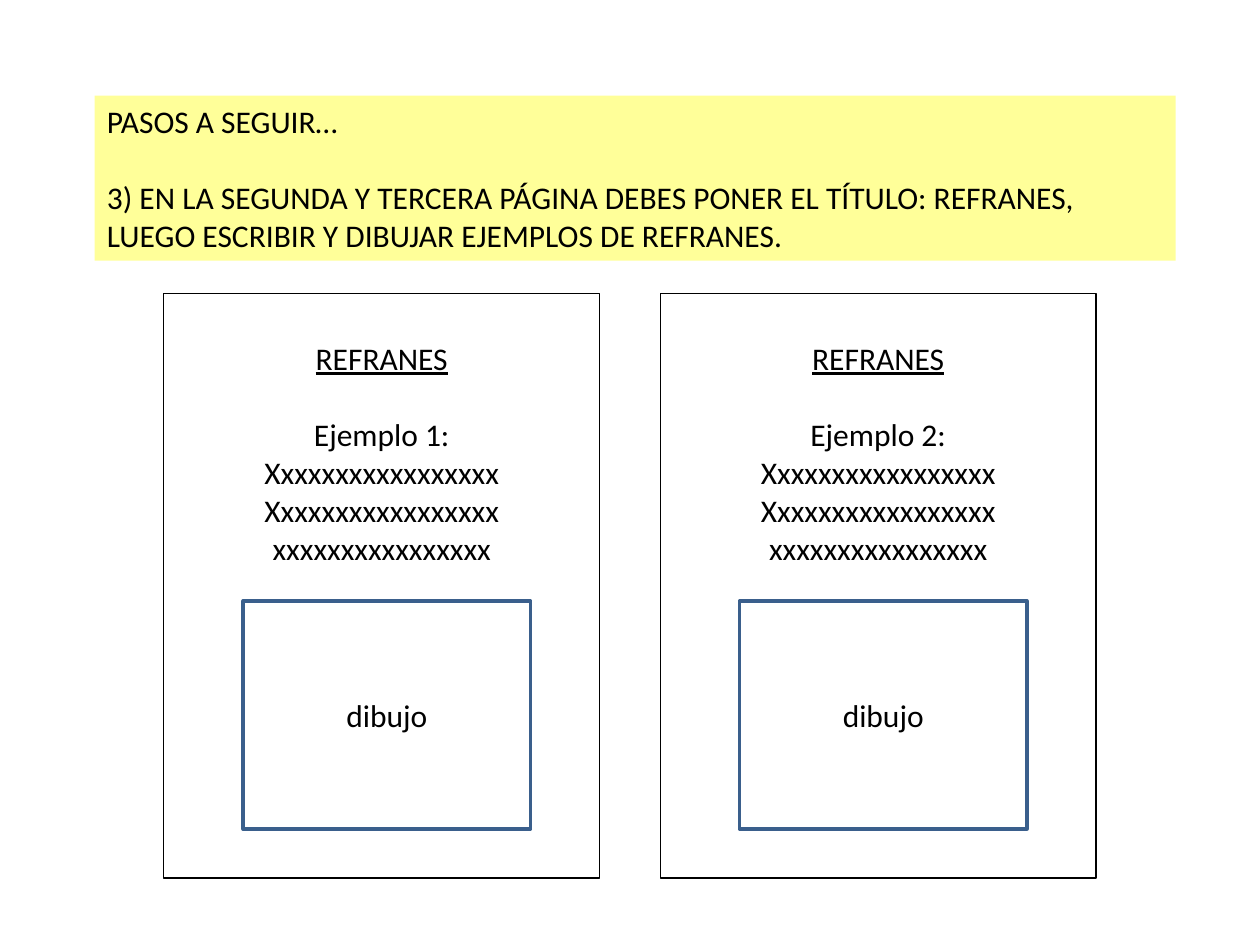
from pptx import Presentation
from pptx.dml.color import RGBColor
from pptx.enum.shapes import MSO_SHAPE
from pptx.enum.text import MSO_ANCHOR, PP_ALIGN
from pptx.util import Inches, Pt

RECTANGLE = MSO_SHAPE.RECTANGLE
TOP, MIDDLE = MSO_ANCHOR.TOP, MSO_ANCHOR.MIDDLE
LEFT, CENTER = PP_ALIGN.LEFT, PP_ALIGN.CENTER
BLANK_LAYOUT = 6
LINE_GAP = Pt(22)


def color(value):
    return RGBColor.from_string(value)


class SlideBuilder:
    font = "Calibri"
    size = Pt(18)
    ink = "000000"
    paper = "FFFFFF"
    highlight = "FFFF99"
    frame = "3A5F8C"

    def __init__(self, slide):
        self.slide = slide

    def box(self, left, top, width, height, lines, fill, line=None,
            weight=0.75, align=CENTER, anchor=TOP):
        box = self.slide.shapes.add_shape(
            RECTANGLE, Inches(left), Inches(top), Inches(width), Inches(height))
        box.shadow.inherit = False
        box.fill.solid()
        box.fill.fore_color.rgb = color(fill)
        if line:
            box.line.color.rgb = color(line)
            box.line.width = Pt(weight)
        else:
            box.line.fill.background()
        text_frame = box.text_frame
        text_frame.word_wrap = True
        text_frame.vertical_anchor = anchor
        text_frame.text = "\n".join(lines)
        for para in text_frame.paragraphs:
            para.alignment = align
            for span in para.runs:
                span.font.name = self.font
                span.font.size = self.size
                span.font.color.rgb = color(self.ink)
        return box

    def instructions(self, heading, step):
        box = self.box(0.75, 0.76, 8.58, 1.31, [heading, step],
                       self.highlight, align=LEFT)
        box.text_frame.paragraphs[1].space_before = LINE_GAP

    def sample_page(self, left, number):
        lines = ["REFRANES", f"Ejemplo {number}:",
                 "X" + "x" * 16, "X" + "x" * 16, "x" * 16]
        page = self.box(left, 2.33, 3.46, 4.64, lines, self.paper, self.ink)
        page.text_frame.margin_top = Inches(0.36)
        title, example = page.text_frame.paragraphs[:2]
        title.runs[0].font.underline = True
        example.space_before = LINE_GAP
        self.box(left + 0.63, 4.77, 2.28, 1.81, ["dibujo"], self.paper,
                 self.frame, weight=2, anchor=MIDDLE)


def main():
    deck = Presentation()
    deck.slide_width, deck.slide_height = Inches(10), Inches(7.5)
    builder = SlideBuilder(deck.slides.add_slide(deck.slide_layouts[BLANK_LAYOUT]))
    builder.instructions(
        "PASOS A SEGUIR…",
        "3) EN LA SEGUNDA Y TERCERA PÁGINA DEBES PONER EL TÍTULO: REFRANES, "
        "LUEGO ESCRIBIR Y DIBUJAR EJEMPLOS DE REFRANES.")
    for number, left in ((2, 5.24), (1, 1.3)):
        builder.sample_page(left, number)
    deck.save("out.pptx")


if __name__ == "__main__":
    main()
